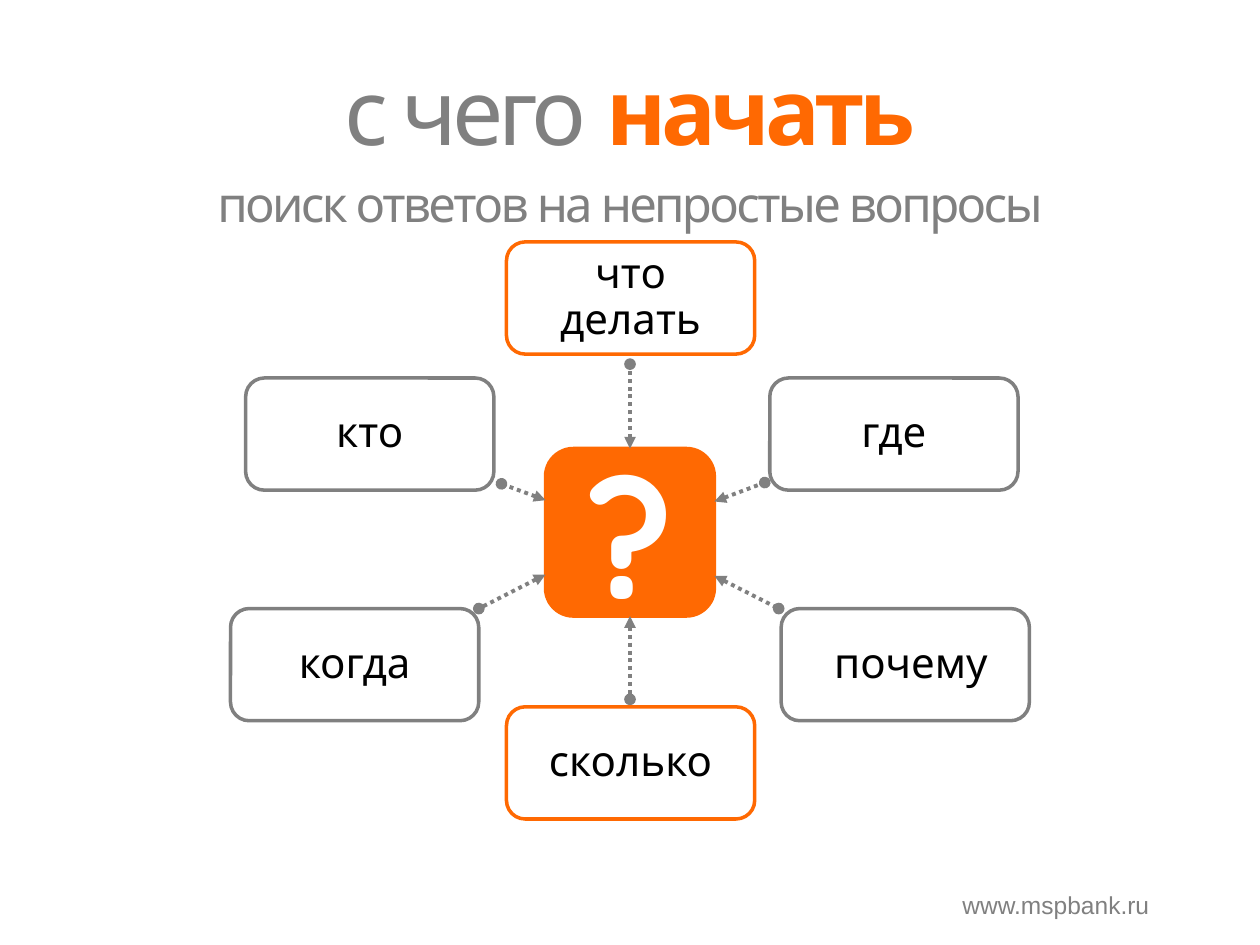
import pptx
import pptx.util
import pptx.dml.color
import pptx.enum.dml
import pptx.enum.shapes
import pptx.enum.text
from pptx.oxml.ns import qn
from lxml import etree

HUES = {"gray": "808080", "fire": "FF6902", "ink": "000000", "pale": "FFFFFF"}
COLS, ROWS = 100, 75
MID = pptx.enum.text.MSO_ANCHOR.MIDDLE
TOP = pptx.enum.text.MSO_ANCHOR.TOP


class Deck:
    """Holds the style and the current slide; lengths are grid cells."""

    font = "Quicksand"

    def __init__(self):
        self.file = pptx.Presentation()
        self.file.slide_width = pptx.util.Inches(10)
        self.file.slide_height = pptx.util.Inches(7.5)
        self.slide = self.file.slides.add_slide(self.file.slide_layouts[5])

    def x(self, cols):
        return round(self.file.slide_width * cols / COLS)

    def y(self, rows):
        return round(self.file.slide_height * rows / ROWS)

    def area(self, left, top, wide, high):
        return self.x(left), self.y(top), self.x(wide), self.y(high)

    def hue(self, name):
        return pptx.dml.color.RGBColor.from_string(HUES[name])

    def text(self, shape, runs, size, font=None, gap=0, lead=1.0,
             pad=None, hold=TOP):
        """Fill one centred paragraph; each run is words, colour, bold."""
        frame = shape.text_frame
        frame.word_wrap = True
        frame.auto_size = pptx.enum.text.MSO_AUTO_SIZE.NONE
        frame.vertical_anchor = hold
        if pad is not None:
            frame.margin_left = frame.margin_right = self.x(pad)
            frame.margin_top = frame.margin_bottom = self.y(pad)
        para = frame.paragraphs[0]
        para.alignment = pptx.enum.text.PP_ALIGN.CENTER
        para.line_spacing = lead
        para.space_before = pptx.util.Pt(0)
        for words, name, bold in runs:
            run = para.add_run()
            run.text = words
            run.font.name = font or self.font
            run.font.size = pptx.util.Pt(size)
            run.font.bold = bold
            run.font.color.rgb = self.hue(name)
            if gap:
                run.font._element.set("spc", str(round(gap * 100)))

    def title(self, area, runs, **style):
        shape = self.slide.shapes.title
        shape.left, shape.top, shape.width, shape.height = self.area(*area)
        self.text(shape, runs, hold=MID, **style)

    def label(self, area, runs, **style):
        self.text(self.slide.shapes.add_textbox(*self.area(*area)),
                  runs, **style)

    def box(self, area, runs, edge, fill=None, **style):
        kind = pptx.enum.shapes.MSO_SHAPE.ROUNDED_RECTANGLE
        shape = self.slide.shapes.add_shape(kind, *self.area(*area))
        shape.shadow.inherit = False
        if fill:
            shape.fill.solid()
            shape.fill.fore_color.rgb = self.hue(fill)
        else:
            shape.fill.background()
        shape.line.color.rgb = self.hue(edge)
        shape.line.width = pptx.util.Pt(2)
        self.text(shape, runs, hold=MID, **style)
        return shape

    def link(self, start, end, hub=None, side=None):
        """Dotted line with an arrow at its start and a dot at its end."""
        kind = pptx.enum.shapes.MSO_CONNECTOR.STRAIGHT
        line = self.slide.shapes.add_connector(
            kind, self.x(start[0]), self.y(start[1]),
            self.x(end[0]), self.y(end[1]))
        if side is not None:
            line.begin_connect(hub, side)
        line.line.color.rgb = self.hue("gray")
        line.line.width = pptx.util.Pt(2.25)
        line.line.dash_style = pptx.enum.dml.MSO_LINE.ROUND_DOT
        pen = line.line._get_or_add_ln()
        for tag, tip in (("a:headEnd", "triangle"), ("a:tailEnd", "oval")):
            etree.SubElement(pen, qn(tag)).set("type", tip)
        etree.SubElement(line._element.spPr, qn("a:effectLst"))


def main():
    deck = Deck()

    # Headings
    deck.title((5, 6, 90, 6.9),
               [("с чего ", "gray", False), ("начать", "fire", True)],
               size=52, gap=-3, lead=0.8)
    deck.label((5.2, 13.3, 89.6, 5),
               [("поиск ответов на непростые вопросы", "gray", False)],
               size=28, gap=-1.5)

    # Hub with the question mark
    hub = deck.box((43.3, 35.6, 13.4, 13.3), [("?", "pale", True)],
                   "fire", "fire", size=96, pad=0)

    # Questions: words, edge, left, top, link start, link end, hub side
    asks = [
        ("что делать", "fire", 40.2, 19.2, (50, 35.6), (50, 28.9), 0),
        ("где", "gray", 61.1, 30, (56.7, 39.8), (60.7, 38.3), None),
        (" почему", "gray", 62, 48.3, (56.7, 45.7), (61.8, 48.3), None),
        ("сколько", "fire", 40.2, 56.1, (50, 48.9), (50, 55.5), 2),
        ("когда", "gray", 18.3, 48.3, (43.3, 45.6), (38, 48.3), None),
        ("кто", "gray", 19.5, 30, (43.3, 39.7), (39.8, 38.4), None),
    ]
    for words, edge, left, top, start, end, side in asks:
        deck.link(start, end, hub, side)
        deck.box((left, top, 19.7, 8.9), [(words, "ink", False)], edge,
                 size=24, lead=0.9, pad=1.1)

    # Web address
    deck.label((74.2, 68.3, 19.2, 4.4), [("www.mspbank.ru", "gray", False)],
               size=14, font="Arial", lead=2.0, pad=0)

    deck.file.save("out.pptx")


if __name__ == "__main__":
    main()
